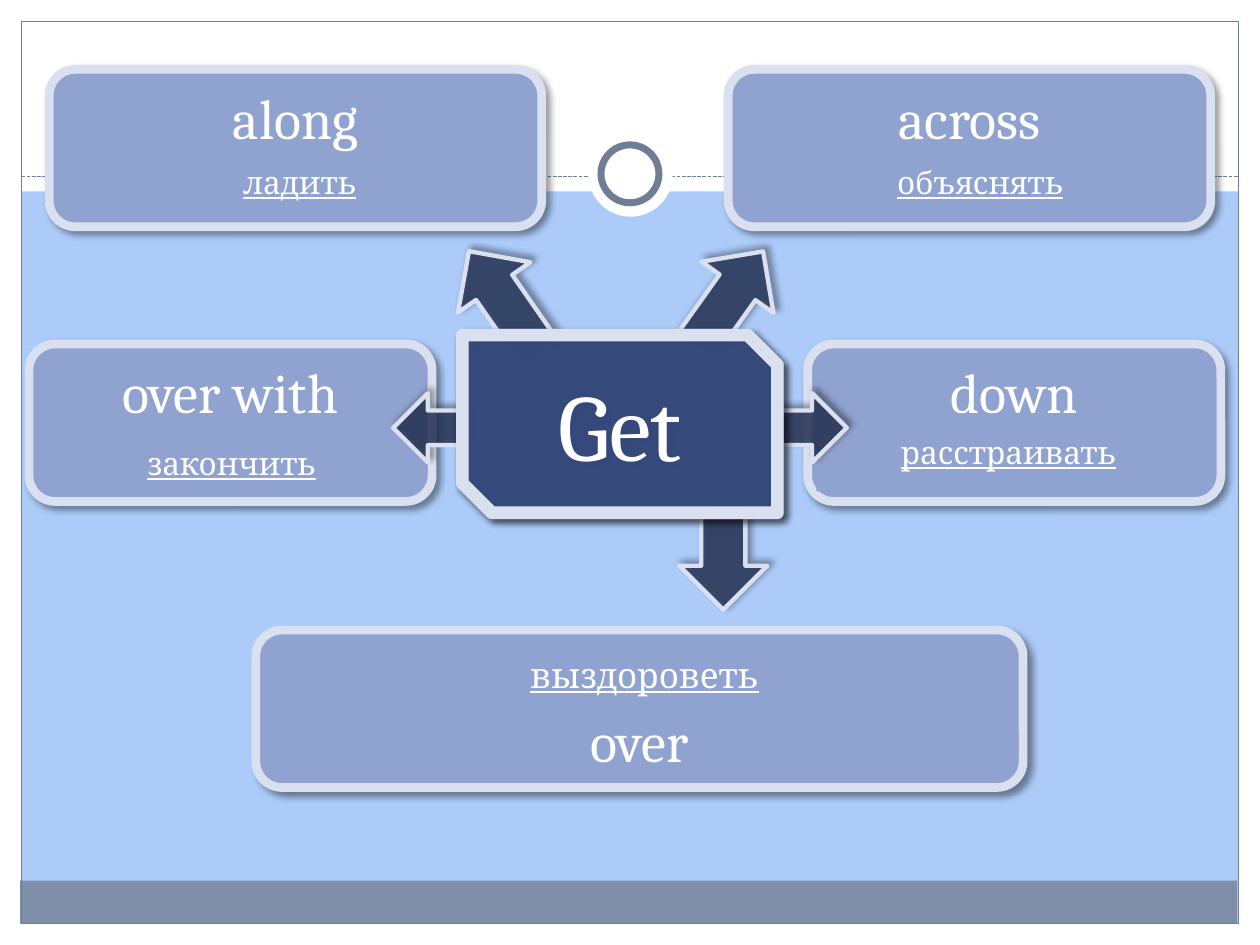
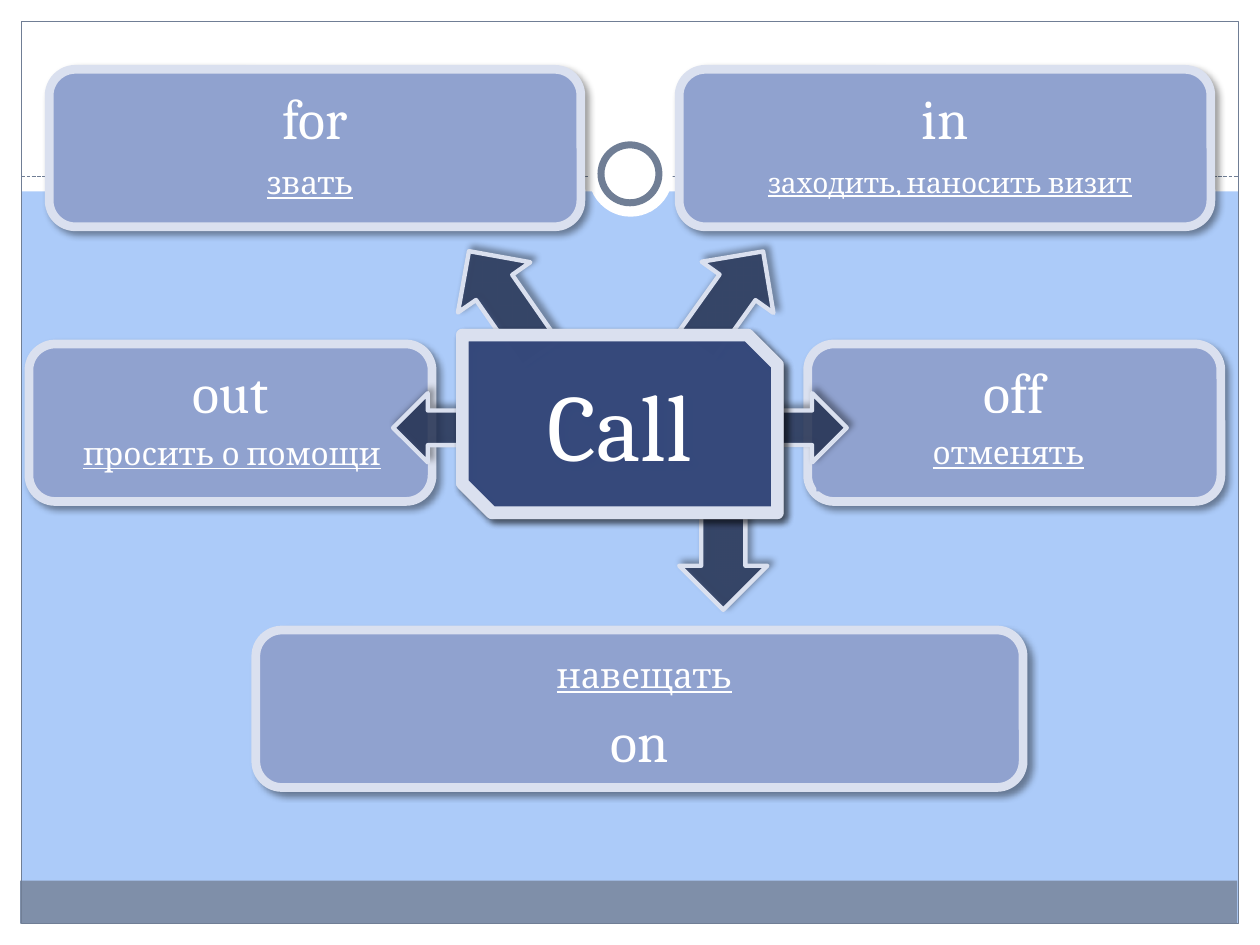
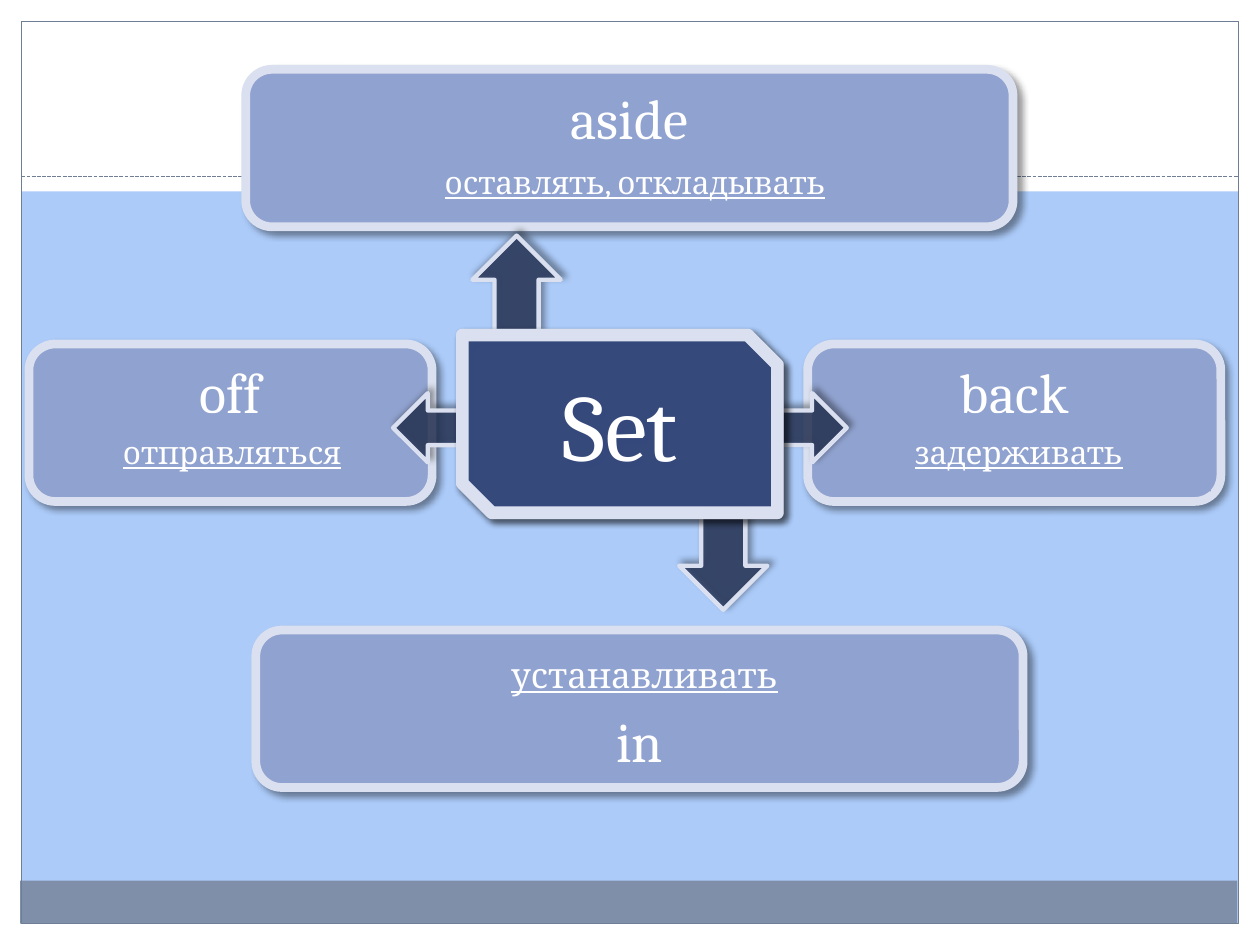
"""Build three word maps of English phrasal verbs with Russian translations."""
import pptx
import pptx.dml.color
import pptx.enum.dml
import pptx.enum.shapes
import pptx.enum.text
import pptx.oxml
import pptx.oxml.ns
import pptx.util

Inches = pptx.util.Inches
Pt = pptx.util.Pt
RGBColor = pptx.dml.color.RGBColor
SHAPE = pptx.enum.shapes.MSO_SHAPE
ANCHOR = pptx.enum.text.MSO_ANCHOR
qn = pptx.oxml.ns.qn

SKY = RGBColor(0xAC, 0xCB, 0xF9)
WHITE = RGBColor(0xFF, 0xFF, 0xFF)
SLATE = RGBColor(0x7F, 0x8F, 0xA9)
FRAME = RGBColor(0x70, 0x7E, 0x95)
NAVY = RGBColor(0x25, 0x33, 0x56)
INDIGO = RGBColor(0x38, 0x4C, 0x81)
PERIWINKLE = RGBColor(0x90, 0xA2, 0xCF)
PALE = RGBColor(0xDA, 0xE0, 0xEF)


def draw(slide, kind, box, fill=None, line=None, width=1, alpha=None, shadow=None, rotation=0):
    """Add a preset shape; alpha is in percent and shadow is its angle."""
    shape = slide.shapes.add_shape(kind, *map(Inches, box))
    shape.rotation = rotation
    shape.shadow.inherit = False
    if fill is None:
        shape.fill.background()
    else:
        shape.fill.solid()
        shape.fill.fore_color.rgb = fill
    if line is None:
        shape.line.fill.background()
    else:
        shape.line.color.rgb = line
        shape.line.width = Pt(width)
    properties = shape.element.spPr
    if alpha is not None:
        color = properties.find(qn("a:solidFill")).find(qn("a:srgbClr"))
        color.append(pptx.oxml.parse_xml(
            f'<a:alpha {pptx.oxml.ns.nsdecls("a")} val="{alpha * 1000}"/>'))
    if shadow is not None:
        properties.find(qn("a:effectLst")).append(pptx.oxml.parse_xml(
            f'<a:outerShdw {pptx.oxml.ns.nsdecls("a")} blurRad="{Pt(4)}" dist="{Pt(3)}" '
            f'dir="{shadow * 60000}" algn="tl" rotWithShape="0">'
            '<a:srgbClr val="000000"><a:alpha val="40000"/></a:srgbClr></a:outerShdw>'))
    return shape


def write(shape, text, size=18, underline=None, anchor=ANCHOR.MIDDLE):
    """Put one centred white line of text into a shape."""
    frame = shape.text_frame
    frame.word_wrap = True
    frame.vertical_anchor = anchor
    paragraph = frame.paragraphs[0]
    paragraph.alignment = pptx.enum.text.PP_ALIGN.CENTER
    run = paragraph.add_run()
    run.text = text
    run.font.name = "Cambria"
    run.font.size = Pt(size)
    run.font.underline = underline
    run.font.color.rgb = WHITE


RIGHT_CARD = (6.41, 2.73, 3.28, 1.25)
LEFT_CARD = (0.23, 2.73, 3.2, 1.25)
BOTTOM_CARD = (2.03, 5, 6.09, 1.25)
CENTRE = (3.67, 2.66, 2.5, 1.41)

LEFT_ARROW = ((3.12, 3.12, 0.55, 0.55), 180)
RIGHT_ARROW = ((6.17, 3.12, 0.55, 0.55), 0)
DOWN_ARROW = ((5.35, 4.1, 0.78, 0.7), 90)
UP_ARROW = ((3.71, 1.91, 0.78, 0.7), 270)
UP_RIGHT_ARROW = ((5.33, 2.02, 0.92, 0.7), 305.5)
UP_LEFT_ARROW = ((3.51, 2.05, 0.99, 0.7), 235.2)
SIDE_ARROWS = [LEFT_ARROW, RIGHT_ARROW, DOWN_ARROW]
FIVE_ARROWS = [UP_RIGHT_ARROW, UP_LEFT_ARROW] + SIDE_ARROWS
FOUR_ARROWS = [UP_ARROW] + SIDE_ARROWS

lessons = [
    ("Get", True, FIVE_ARROWS, [
        ("down", RIGHT_CARD, "расстраивать", (6.48, 3.28, 3.05, 0.62), 18),
        ("over with", LEFT_CARD, "закончить", (0.55, 3.44, 2.58, 0.47), 18),
        ("over", BOTTOM_CARD, "выздороветь", (2.34, 5.16, 5.55, 0.39), 20),
        ("along", (0.39, 0.55, 3.91, 1.25), "ладить", (0.62, 1.25, 3.52, 0.39), 18),
        ("across", (5.78, 0.55, 3.83, 1.25), "объяснять", (6.02, 1.25, 3.52, 0.39), 18),
    ]),
    ("Call", True, FIVE_ARROWS, [
        ("off", RIGHT_CARD, "отменять", (6.48, 3.28, 3.05, 0.62), 18),
        ("out", LEFT_CARD, "просить о помощи", (0.55, 3.36, 2.58, 0.47), 18),
        ("on", BOTTOM_CARD, "навещать", (2.81, 5.16, 4.61, 0.39), 20),
        ("for", (0.39, 0.55, 4.22, 1.25), "звать", (0.47, 1.25, 3.98, 0.39), 18),
        ("in", (5.39, 0.55, 4.22, 1.25), "заходить, наносить визит",
         (5.55, 1.25, 3.98, 0.39), 16),
    ]),
    ("Set", False, FOUR_ARROWS, [
        ("back", RIGHT_CARD, "задерживать", (6.56, 3.28, 3.05, 0.62), 18),
        ("off", LEFT_CARD, "отправляться", (0.55, 3.28, 2.58, 0.62), 18),
        ("in", BOTTOM_CARD, "устанавливать", (2.81, 5.16, 4.61, 0.39), 20),
        ("aside", (1.95, 0.55, 6.09, 1.25), "оставлять, откладывать",
         (2.19, 1.25, 5.7, 0.39), 18),
    ]),
]

deck = pptx.Presentation()
deck.slide_width = Inches(10)
deck.slide_height = Inches(7.5)
blank = deck.slide_layouts[6]
slides = [deck.slides.add_slide(blank) for _ in lessons]

master = deck.slide_master
master.background.fill.solid()
master.background.fill.fore_color.rgb = SKY
backdrop = []
for margin in [(0, 7.33, 10, 0.17), (0, 0, 10, 1.52), (0, 0, 0.17, 7.5), (9.83, 0, 0.17, 7.5)]:
    backdrop.append(draw(slides[0], SHAPE.RECTANGLE, margin, fill=WHITE))
backdrop.append(draw(slides[0], SHAPE.RECTANGLE, (0.16, 6.99, 9.66, 0.34), fill=SLATE))
backdrop.append(draw(slides[0], SHAPE.RECTANGLE, (0.17, 0.17, 9.66, 7.16), line=FRAME, width=0.75))
divider = slides[0].shapes.add_connector(
    pptx.enum.shapes.MSO_CONNECTOR.STRAIGHT, Inches(0.17), Inches(1.4), Inches(9.83), Inches(1.4))
divider.line.color.rgb = FRAME
divider.line.width = Pt(0.75)
divider.line.dash_style = pptx.enum.dml.MSO_LINE.SQUARE_DOT
divider.element.spPr.append(pptx.oxml.parse_xml(f'<a:effectLst {pptx.oxml.ns.nsdecls("a")}/>'))
backdrop.append(divider)
for number, part in enumerate(backdrop, start=101):
    part.element.xpath(".//p:cNvPr")[0].set("id", str(number))
    master.element.cSld.spTree.append(part.element)

for slide, (verb, has_ring, arrows, cards) in zip(slides, lessons):
    if has_ring:
        draw(slide, SHAPE.OVAL, (4.67, 1.05, 0.67, 0.67), fill=WHITE)
        draw(slide, SHAPE.OVAL, (4.77, 1.15, 0.46, 0.46), fill=WHITE, line=FRAME, width=4)
    for particle, card_box, translation, translation_box, size in cards:
        card = draw(slide, SHAPE.ROUNDED_RECTANGLE, card_box, fill=PERIWINKLE,
                    line=PALE, width=5, shadow=45)
        write(card, particle, size=32,
              anchor=ANCHOR.BOTTOM if card_box == BOTTOM_CARD else ANCHOR.TOP)
        meaning = draw(slide, SHAPE.RECTANGLE, translation_box, fill=PERIWINKLE)
        write(meaning, translation, size=size, underline=True)
    for arrow_box, angle in arrows:
        draw(slide, SHAPE.RIGHT_ARROW, arrow_box, fill=NAVY, line=PALE, width=2.5,
             alpha=79, shadow=315, rotation=angle)
    for _ in range(2):
        centre = draw(slide, SHAPE.SNIP_2_DIAG_RECTANGLE, CENTRE, fill=INDIGO,
                      line=PALE, width=7.25, alpha=88, shadow=45)
    write(centre, verb, size=54)

deck.save("out.pptx")
